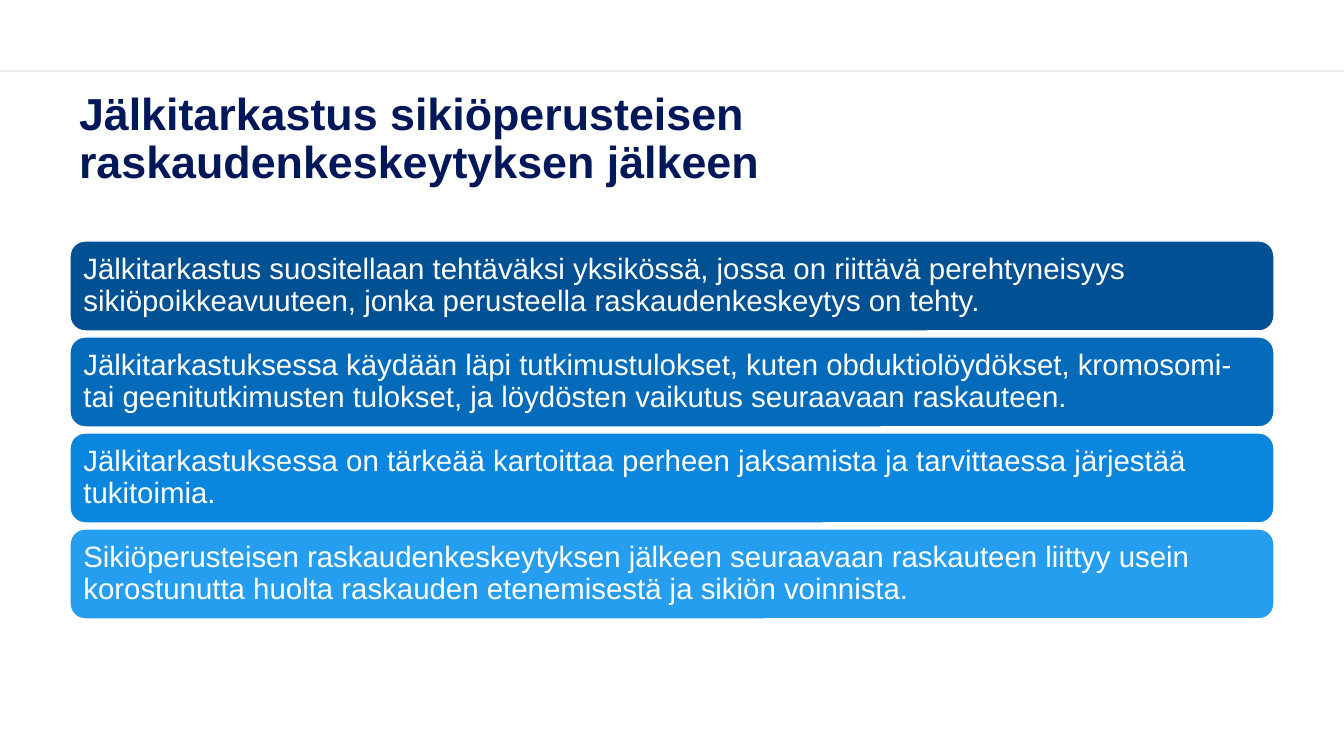
from lxml import etree
from pptx import Presentation
from pptx.dml.color import RGBColor
from pptx.enum.shapes import MSO_CONNECTOR, MSO_SHAPE
from pptx.enum.text import MSO_ANCHOR, MSO_AUTO_SIZE, PP_ALIGN
from pptx.oxml.ns import qn
from pptx.util import Emu, Pt

STRAIGHT = MSO_CONNECTOR.STRAIGHT
ROUNDED = MSO_SHAPE.ROUNDED_RECTANGLE
MIDDLE = MSO_ANCHOR.MIDDLE
LEFT = PP_ALIGN.LEFT
NO_AUTOFIT = MSO_AUTO_SIZE.NONE
EMU_PER_PX = 914400 / 100.8


def px(*lengths):
    return [Emu(round(length * EMU_PER_PX)) for length in lengths]


def write(shape, text, size, color, bold, margins):
    frame = shape.text_frame
    frame.text = text
    frame.word_wrap = True
    frame.auto_size = NO_AUTOFIT
    frame.vertical_anchor = MIDDLE
    frame.margin_left, frame.margin_top, frame.margin_right, frame.margin_bottom = px(*margins)
    para = frame.paragraphs[0]
    para.alignment = LEFT
    para.line_spacing = 0.9
    font = para.runs[0].font
    font.name = "Arial"
    font.size = Pt(size)
    font.bold = bold
    font.color.rgb = RGBColor.from_string(color)


deck = Presentation()
deck.slide_width, deck.slide_height = px(1344, 756)
page = deck.slides.add_slide(deck.slide_layouts[5])

rule = page.shapes.add_connector(STRAIGHT, *px(0, 71, 1344, 71))
rule.line.width = Pt(1)
rule.line.color.rgb = RGBColor.from_string("000000")
properties = rule._element.spPr
black = properties.find(".//" + qn("a:srgbClr"))
etree.SubElement(black, qn("a:alpha")).set("val", "10000")
etree.SubElement(properties, qn("a:effectLst"))

title = page.shapes.title
title.left, title.top, title.width, title.height = px(69, 94, 1204, 92)
write(title, "Jälkitarkastus sikiöperusteisen raskaudenkeskeytyksen jälkeen",
      32, "001759", True, (10, 5, 10, 5))

bars = [
    ("005193", "Jälkitarkastus suositellaan tehtäväksi yksikössä, jossa on riittävä perehtyneisyys "
               "sikiöpoikkeavuuteen, jonka perusteella raskaudenkeskeytys on tehty."),
    ("046BBA", "Jälkitarkastuksessa käydään läpi tutkimustulokset, kuten obduktiolöydökset, kromosomi- "
               "tai geenitutkimusten tulokset, ja löydösten vaikutus seuraavaan raskauteen."),
    ("0B86DF", "Jälkitarkastuksessa on tärkeää kartoittaa perheen jaksamista ja tarvittaessa järjestää "
               "tukitoimia."),
    ("269EEF", "Sikiöperusteisen raskaudenkeskeytyksen jälkeen seuraavaan raskauteen liittyy usein "
               "korostunutta huolta raskauden etenemisestä ja sikiön voinnista."),
]
for index, (color, text) in enumerate(bars):
    bar = page.shapes.add_shape(ROUNDED, *px(70, 241 + 96 * index, 1204, 90))
    bar.shadow.inherit = False
    bar.fill.solid()
    bar.fill.fore_color.rgb = RGBColor.from_string(color)
    bar.line.width = Pt(1)
    bar.line.color.rgb = RGBColor.from_string("FFFFFF")
    write(bar, text, 21, "FFFFFF", False, (9, 9, 9, 9))

deck.save("out.pptx")
